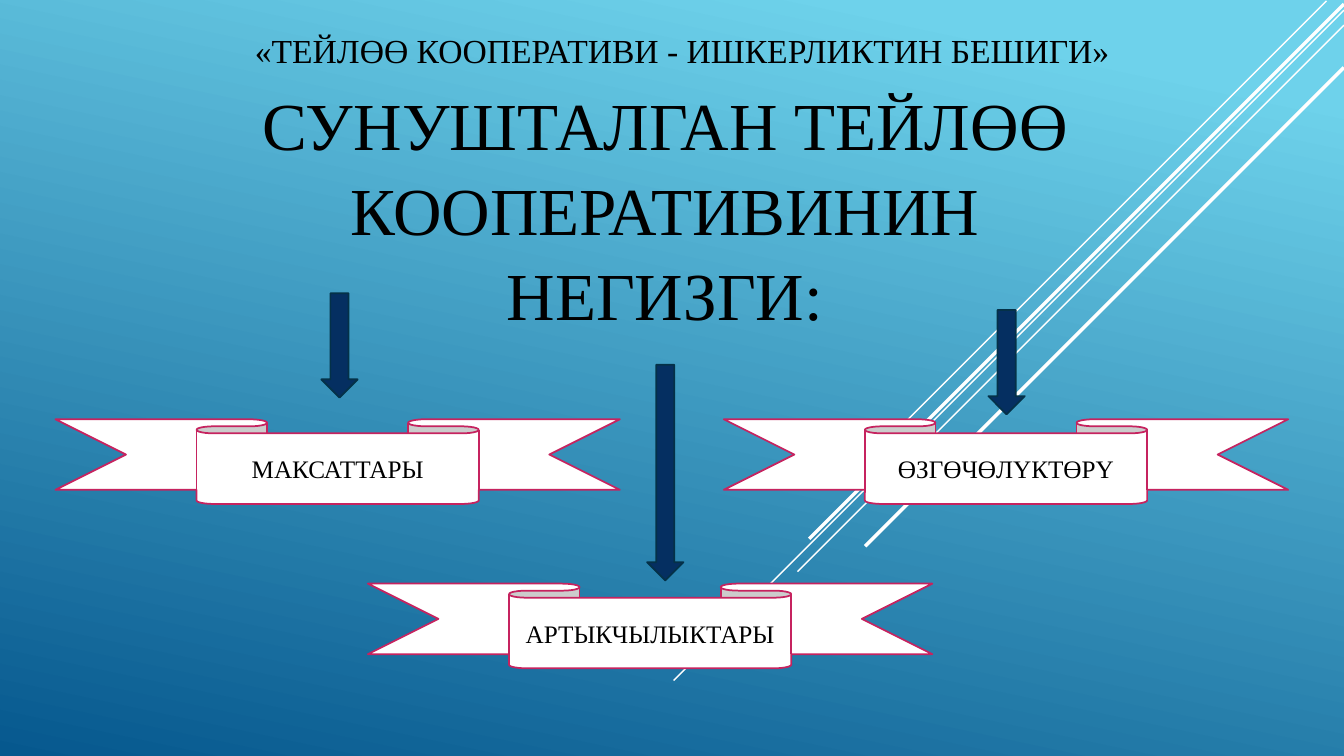
from lxml import etree
from pptx import Presentation
from pptx.dml.color import RGBColor
from pptx.enum.shapes import MSO_CONNECTOR, MSO_SHAPE
from pptx.enum.text import MSO_ANCHOR, MSO_AUTO_SIZE, PP_ALIGN
from pptx.oxml.ns import qn
from pptx.util import Pt

STRAIGHT = MSO_CONNECTOR.STRAIGHT
RIBBON = MSO_SHAPE.DOWN_RIBBON
DOWN_ARROW = MSO_SHAPE.DOWN_ARROW
MIDDLE, BOTTOM = MSO_ANCHOR.MIDDLE, MSO_ANCHOR.BOTTOM
LEFT, CENTER = PP_ALIGN.LEFT, PP_ALIGN.CENTER
NO_AUTOFIT = MSO_AUTO_SIZE.NONE

FONT = "Times New Roman"
BLACK = RGBColor(0x00, 0x00, 0x00)
WHITE = RGBColor(0xFF, 0xFF, 0xFF)
SKY = RGBColor(0x6E, 0xD2, 0xEB)
DEEP_BLUE = RGBColor(0x06, 0x58, 0x8E)
CRIMSON = RGBColor(0xC6, 0x23, 0x5F)
NAVY = RGBColor(0x05, 0x2F, 0x61)
NAVY_EDGE = RGBColor(0x04, 0x31, 0x48)


def write_text(shape, text, size, align, anchor):
    frame = shape.text_frame
    frame.text = text
    frame.word_wrap = True
    frame.auto_size = NO_AUTOFIT
    frame.vertical_anchor = anchor
    paragraph = frame.paragraphs[0]
    paragraph.alignment = align
    font = paragraph.runs[0].font
    font.name = FONT
    font.size = Pt(size)
    font.color.rgb = BLACK


def add_filled_shape(kind, left, top, width, height, fill, edge):
    shape = slide.shapes.add_shape(kind, Pt(left), Pt(top), Pt(width), Pt(height))
    shape.shadow.inherit = False
    shape.fill.solid()
    shape.fill.fore_color.rgb = fill
    shape.line.color.rgb = edge
    shape.line.width = Pt(1.25)
    return shape


presentation = Presentation()
presentation.slide_width = Pt(960)
presentation.slide_height = Pt(540)
slide = presentation.slides.add_slide(presentation.slide_layouts[5])

# Background gradient
background = slide.background.fill
background.gradient()
background.gradient_angle = 258
for stop, position, color in zip(background.gradient_stops, (0.1, 1), (SKY, DEEP_BLUE)):
    stop.position = position
    stop.color.rgb = color

# Diagonal rays, all falling to the left at 45 degrees: start x, start y, drop, width
rays = [
    (947.5, 0.7, 300, 1),
    (960, 7.2, 478.8, 1),
    (960, 18, 390.3, 1),
    (960, 2.9, 382, 2.5),
    (960, 48.2, 342, 2.5),
]
for x, y, drop, width in rays:
    ray = slide.shapes.add_connector(STRAIGHT, Pt(x), Pt(y), Pt(x - drop), Pt(y + drop))
    ray.line.color.rgb = WHITE
    ray.line.width = Pt(width)
    etree.SubElement(ray._element.spPr, qn("a:effectLst"))

# Title and heading
title = slide.shapes.title
title.left, title.top, title.width, title.height = Pt(160), Pt(54), Pt(630), Pt(188)
write_text(title, "СУНУШТАЛГАН ТЕЙЛӨӨ КООПЕРАТИВИНИН НЕГИЗГИ:", 48, CENTER, BOTTOM)
title.text_frame.paragraphs[0].line_spacing = 1.05

heading = slide.shapes.add_textbox(Pt(175), Pt(12), Pt(640), Pt(42))
write_text(heading, "«ТЕЙЛӨӨ КООПЕРАТИВИ - ИШКЕРЛИКТИН БЕШИГИ»", 24, LEFT, BOTTOM)

# Ribbons
ribbons = [
    ("МАКСАТТАРЫ", 39.6, 299.5),
    ("АРТЫКЧЫЛЫКТАРЫ", 262.8, 416.9),
    ("ӨЗГӨЧӨЛҮКТӨРҮ", 517, 299.5),
]
for label, left, top in ribbons:
    ribbon = add_filled_shape(RIBBON, left, top, 403.2, 60.5, WHITE, CRIMSON)
    write_text(ribbon, label, 18, CENTER, MIDDLE)

# Arrows pointing at the ribbons
for left, top, height in [(229.5, 209.5, 74.5), (462.2, 260.6, 154), (706, 221.5, 74.5)]:
    add_filled_shape(DOWN_ARROW, left, top, 26, height, NAVY, NAVY_EDGE)

presentation.save("out.pptx")
